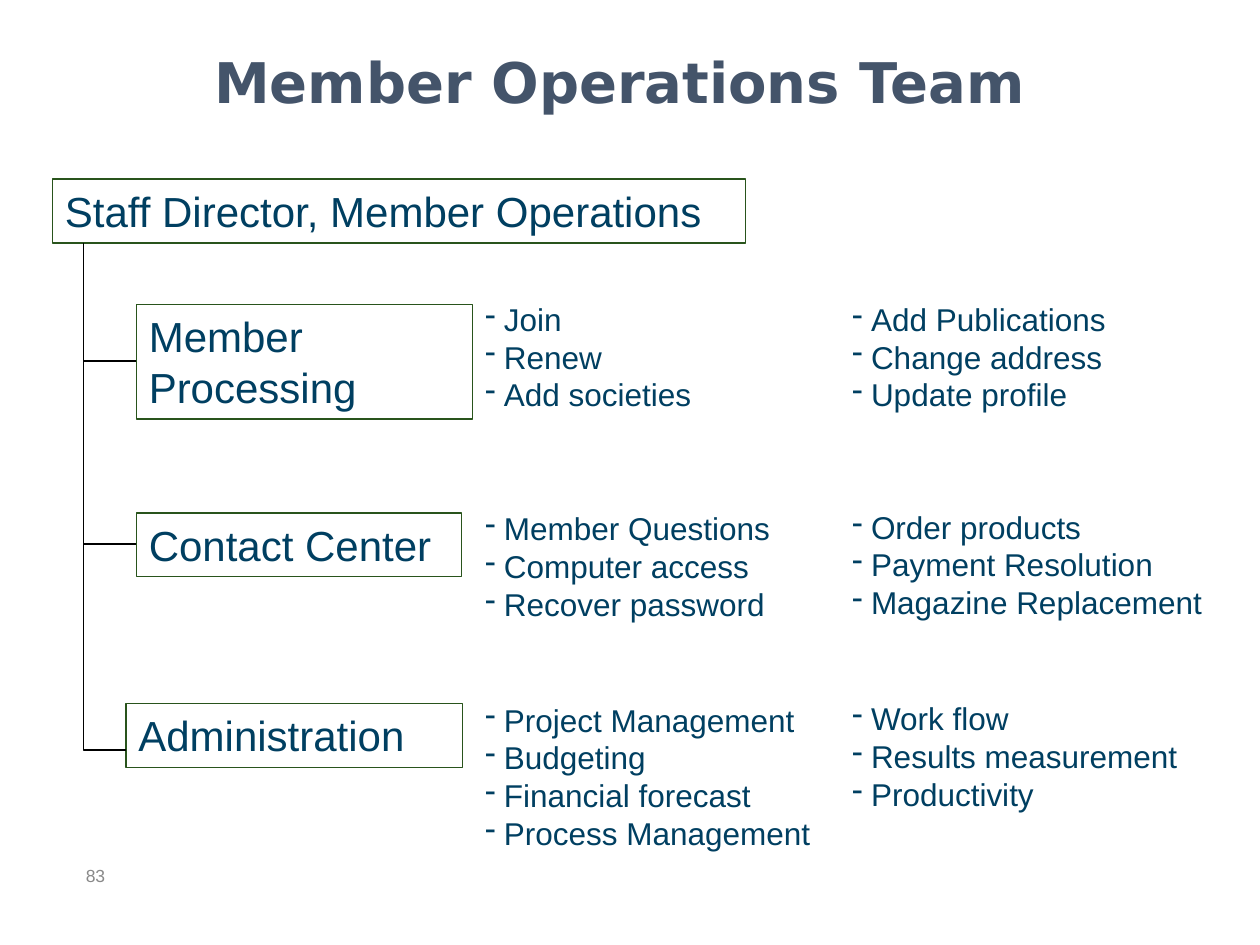
from lxml.etree import SubElement
from pptx import Presentation
from pptx.dml.color import RGBColor
from pptx.enum.shapes import MSO_CONNECTOR, MSO_SHAPE
from pptx.enum.text import MSO_ANCHOR, PP_ALIGN
from pptx.oxml.ns import qn
from pptx.util import Cm, Pt


def color(hex_code):
    return RGBColor.from_string(hex_code)


class TeamSlide:
    font = "Arial"
    title_font = "DejaVu Sans"
    ink = "003F61"
    title_ink = "44546A"
    border = "29541C"
    muted = "898989"
    branch_ink = "000000"
    line_width = Pt(0.75)
    bullet_indent = Cm(0.38)

    def __init__(self, deck):
        self.slide = deck.slides.add_slide(deck.slide_layouts[5])

    def set_text(self, frame, lines, size, ink, font=None, bold=False,
                 align=PP_ALIGN.LEFT, anchor=MSO_ANCHOR.TOP):
        frame.text = "\n".join(lines)
        frame.word_wrap = True
        frame.vertical_anchor = anchor
        for paragraph in frame.paragraphs:
            paragraph.alignment = align
            for run in paragraph.runs:
                run.font.name = font or self.font
                run.font.size = Pt(size)
                run.font.bold = bold
                run.font.color.rgb = color(ink)

    def title(self, text, left, top, width, height):
        heading = self.slide.shapes.title
        heading.left, heading.top = Cm(left), Cm(top)
        heading.width, heading.height = Cm(width), Cm(height)
        self.set_text(heading.text_frame, [text], 32, self.title_ink,
                      self.title_font, True, PP_ALIGN.CENTER)

    def role(self, text, left, top, width, height):
        role = self.slide.shapes.add_shape(
            MSO_SHAPE.RECTANGLE, Cm(left), Cm(top), Cm(width), Cm(height))
        role.shadow.inherit = False
        role.fill.background()
        role.line.color.rgb = color(self.border)
        role.line.width = self.line_width
        self.set_text(role.text_frame, [text], 24, self.ink)

    def branch(self, left, top, right, bottom):
        center_x, center_y = (left + right) / 2, (top + bottom) / 2
        half_drop, half_reach = (bottom - top) / 2, (right - left) / 2
        branch = self.slide.shapes.add_connector(
            MSO_CONNECTOR.ELBOW,
            Cm(center_x + half_drop), Cm(center_y - half_reach),
            Cm(center_x - half_drop), Cm(center_y + half_reach))
        branch.line.color.rgb = color(self.branch_ink)
        branch.line.width = self.line_width
        properties = branch._element.spPr
        properties.find(qn("a:xfrm")).set("rot", "16200000")
        properties.find(qn("a:prstGeom")).set("prst", "bentConnector2")
        SubElement(properties, qn("a:effectLst"))

    def duties(self, items, left, top, width):
        duties = self.slide.shapes.add_textbox(
            Cm(left), Cm(top), Cm(width), Cm(0.25 + 0.77 * len(items)))
        self.set_text(duties.text_frame, items, 18, self.ink)
        for paragraph in duties.text_frame.paragraphs:
            properties = paragraph._p.get_or_add_pPr()
            properties.set("marL", str(self.bullet_indent))
            properties.set("indent", str(-self.bullet_indent))
            bullet_color = SubElement(properties, qn("a:buClr"))
            SubElement(bullet_color, qn("a:srgbClr")).set("val", self.ink)
            SubElement(properties, qn("a:buChar")).set("char", "-")

    def page_number(self, text, left, top, width, height):
        number = self.slide.shapes.add_textbox(
            Cm(left), Cm(top), Cm(width), Cm(height))
        self.set_text(number.text_frame, [text], 10, self.muted,
                      anchor=MSO_ANCHOR.MIDDLE)


def main():
    deck = Presentation()
    deck.slide_width, deck.slide_height = Cm(25.4), Cm(19.05)
    team = TeamSlide(deck)
    team.title("Member Operations Team", 1.7, 0.84, 21.59, 2.11)
    director_bottom, trunk = 4.9, 1.69
    team.role("Staff Director, Member Operations", 1.06, 3.61, 13.97, 1.29)

    teams = [
        ("Member Processing", (2.75, 6.14, 6.78, 2.31), 7.28,
         ["Join", "Renew", "Add societies"], 5.92,
         ["Add Publications", "Change address", "Update profile"], 5.92),
        ("Contact Center", (2.75, 10.34, 6.56, 1.29), 10.97,
         ["Member Questions", "Computer access", "Recover password"], 10.14,
         ["Order products", "Payment Resolution", "Magazine Replacement"],
         10.11),
        ("Administration", (2.54, 14.18, 6.78, 1.29), 15.12,
         ["Project Management", "Budgeting", "Financial forecast",
          "Process Management"], 14.0,
         ["Work flow", "Results measurement", "Productivity"], 13.97),
    ]
    for name, place, joint, first, first_top, second, second_top in teams:
        team.role(name, *place)
        team.branch(trunk, director_bottom, place[0], joint)
        team.duties(first, 9.53, first_top, 7.62)
        team.duties(second, 16.93, second_top, 8.05)

    team.page_number("83", 1.48, 17.15, 1.91, 1.01)
    deck.save("out.pptx")


if __name__ == "__main__":
    main()
